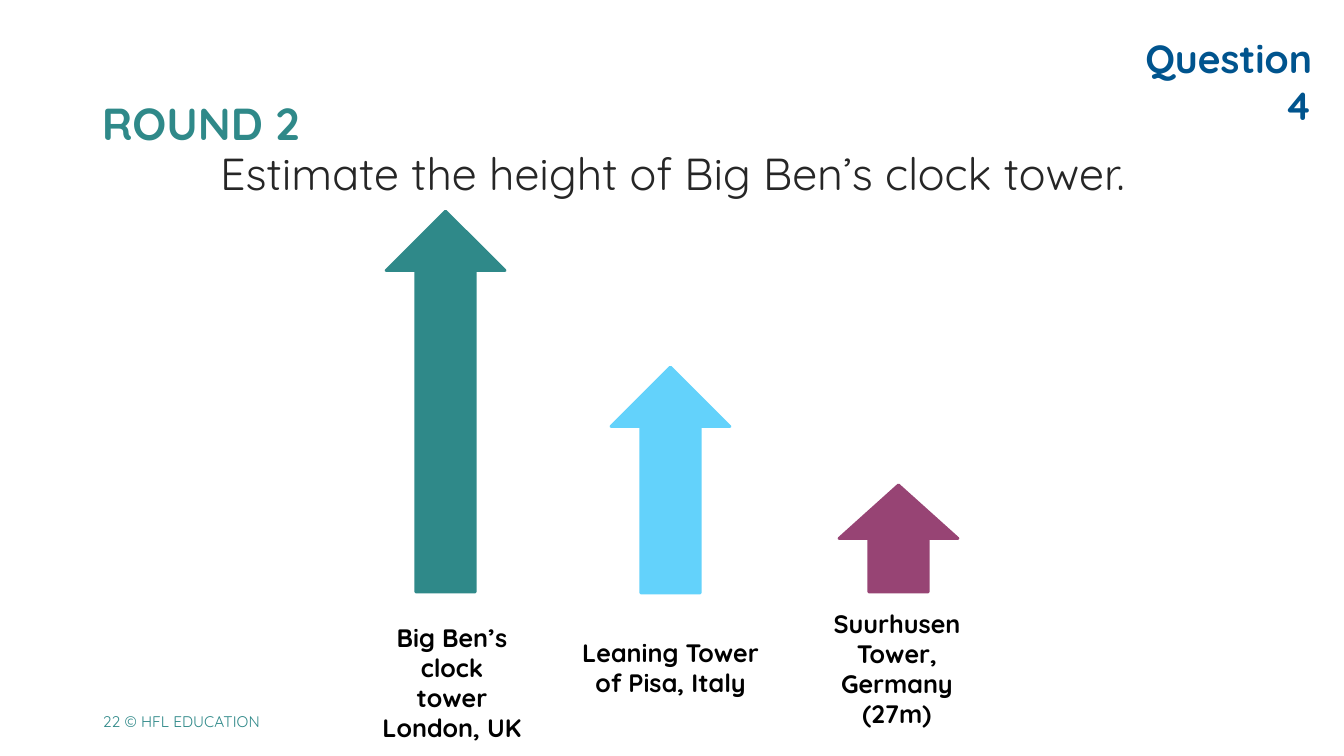
from pptx import Presentation
from pptx.dml.color import RGBColor
from pptx.enum.shapes import MSO_SHAPE
from pptx.enum.text import MSO_ANCHOR, PP_ALIGN
from pptx.util import Emu, Pt

TEAL = RGBColor(0x2F, 0x89, 0x89)
SKY = RGBColor(0x63, 0xD2, 0xFB)
PLUM = RGBColor(0x97, 0x44, 0x74)
NAVY = RGBColor(0x00, 0x54, 0x8E)
INK = RGBColor(0x26, 0x26, 0x26)
BLACK = RGBColor(0, 0, 0)

FONT = "Quicksand"
SCALE = 914400 / 100.8
SIZE = (1344, 756)
ARROW_WIDTH = 119
LEFT, MID, RIGHT = PP_ALIGN.LEFT, PP_ALIGN.CENTER, PP_ALIGN.RIGHT
TOP, CENTRE = MSO_ANCHOR.TOP, MSO_ANCHOR.MIDDLE

# text, box in px, alignment, anchor, font
TEXTS = [
    ("22 © HFL EDUCATION", (93, 701, 277, 40), LEFT, CENTRE,
     {"size": Pt(11), "bold": False, "color": TEAL}),
    ("ROUND 2", (92, 59, 992, 127), LEFT, CENTRE,
     {"size": Pt(32), "bold": True, "color": TEAL}),
    ("Estimate the height of Big Ben’s clock tower.",
     (54, 141, 1238, 416), MID, TOP,
     {"size": Pt(32), "bold": False, "color": INK}),
    ("Question 4", (1130, 29, 192, 57), RIGHT, TOP,
     {"size": Pt(28), "bold": True, "color": NAVY}),
]

# arrow left, top, height, colour; label, label box in px
TOWERS = [
    (386, 211, 381, TEAL, "Big Ben’s clock\vtower\nLondon, UK",
     (370, 617, 164, 102)),
    (611, 367, 226, SKY, "Leaning Tower of Pisa, Italy",
     (570, 632, 201, 72)),
    (839, 485, 107, PLUM, "Suurhusen Tower, Germany (27m)",
     (796, 603, 202, 132)),
]
LABEL = {"size": Pt(18), "bold": True, "color": BLACK}


def px(*nums):
    """Turn px lengths into EMU."""
    return [Emu(round(n * SCALE)) for n in nums]


def add_text(slide, text, box, align, anchor, style):
    frame = slide.shapes.add_textbox(*px(*box)).text_frame
    frame.word_wrap = True
    frame.vertical_anchor = anchor
    frame.text = text
    for para in frame.paragraphs:
        para.alignment = align
        for run in para.runs:
            run.font.name = FONT
            for key, value in style.items():
                if key == "color":
                    run.font.color.rgb = value
                else:
                    setattr(run.font, key, value)


def add_arrow(slide, left, top, height, color):
    box = px(left, top, ARROW_WIDTH, height)
    arrow = slide.shapes.add_shape(MSO_SHAPE.UP_ARROW, *box)
    arrow.shadow.inherit = False
    arrow.fill.solid()
    arrow.fill.fore_color.rgb = color
    arrow.line.color.rgb = color
    arrow.line.width = Pt(2)


def main():
    deck = Presentation()
    deck.slide_width, deck.slide_height = px(*SIZE)
    slide = deck.slides.add_slide(deck.slide_layouts[6])
    for item in TEXTS:
        add_text(slide, *item)
    for left, top, height, color, label, box in TOWERS:
        add_arrow(slide, left, top, height, color)
        add_text(slide, label, box, MID, TOP, LABEL)
    deck.save("out.pptx")


if __name__ == "__main__":
    main()
